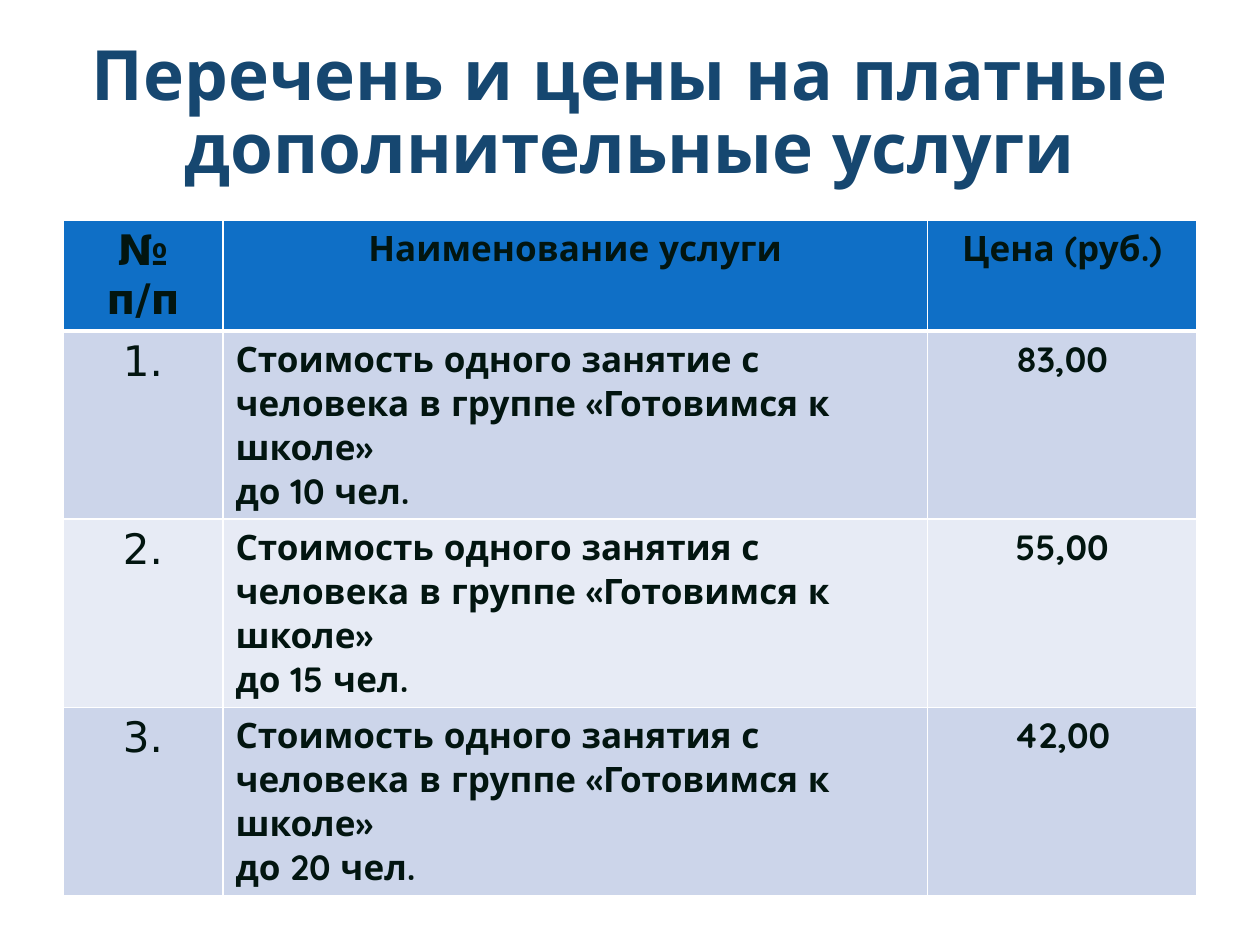
"""Build a slide with a price table for paid extra services."""
import pptx
import pptx.dml.color
import pptx.enum.text
import pptx.oxml
import pptx.oxml.ns
import pptx.util
from pptx.util import Inches

TITLE = "Перечень и цены на платные дополнительные услуги"
HEADER = ("№\nп/п", "Наименование услуги", "Цена (руб.)")
SERVICE = "Стоимость одного {} с человека в группе «Готовимся к школе»\nдо {} чел."
SERVICES = [("занятие", 10, "83,00"), ("занятия", 15, "55,00"), ("занятия", 20, "42,00")]
ROWS = [HEADER] + [
    (f"{number}.", SERVICE.format(noun, size), price)
    for number, (noun, size, price) in enumerate(SERVICES, 1)
]
WIDTHS = (1.27, 5.59, 2.14)
HEIGHTS = (0.77, 1.46, 1.46, 1.46)
COLORS = {"title": "164770", "text": "021510", "header": "0F6FC6",
          "odd": "CCD5EA", "even": "E7EBF5", "border": "FFFFFF"}
NUMBER_FONT = {"name": "DejaVu Sans", "size": pptx.util.Pt(24)}
TEXT_FONT = {"name": "Quicksand", "size": pptx.util.Pt(20), "bold": True}
TITLE_FONT = {"name": "Quicksand", "size": pptx.util.Pt(39.6), "bold": True}
ALIGN = pptx.enum.text.PP_ALIGN


def rgb(name):
    return pptx.dml.color.RGBColor.from_string(COLORS[name])


def format_text(tf, font, color, align):
    for p in tf.paragraphs:
        p.alignment = align
        for key, value in font.items():
            setattr(p.font, key, value)
        p.font.color.rgb = rgb(color)


def set_borders(cell, widths):
    for i, (side, width) in enumerate(widths.items()):
        line = pptx.oxml.parse_xml(
            f'<a:ln{side} {pptx.oxml.ns.nsdecls("a")} w="{pptx.util.Pt(width)}">'
            f'<a:solidFill><a:srgbClr val="{COLORS["border"]}"/></a:solidFill></a:ln{side}>')
        cell._tc.get_or_add_tcPr().insert(i, line)


def add_title(s):
    sp = s.shapes.title
    sp.left, sp.top, sp.width, sp.height = map(Inches, (0.51, 0.29, 8.98, 1.25))
    tf = sp.text_frame
    tf.text = TITLE
    tf.word_wrap = True
    tf.vertical_anchor = pptx.enum.text.MSO_ANCHOR.MIDDLE
    tf.paragraphs[0].line_spacing = 0.88
    format_text(tf, TITLE_FONT, "title", ALIGN.CENTER)


def add_prices(s):
    table = s.shapes.add_table(len(ROWS), len(WIDTHS), Inches(0.5), Inches(1.75),
                               Inches(sum(WIDTHS)), Inches(sum(HEIGHTS))).table
    for column, width in zip(table.columns, WIDTHS):
        column.width = Inches(width)
    for r, (row, height) in enumerate(zip(ROWS, HEIGHTS)):
        table.rows[r].height = Inches(height)
        fill = "header" if r == 0 else "odd" if r % 2 else "even"
        for c, text in enumerate(row):
            cell = table.cell(r, c)
            cell.text = text
            cell.fill.solid()
            cell.fill.fore_color.rgb = rgb(fill)
            set_borders(cell, {"L": 1, "R": 1, "T": 3 if r == 1 else 1, "B": 3 if r == 0 else 1})
            font = TEXT_FONT if c else {**NUMBER_FONT, "bold": r == 0}
            align = ALIGN.LEFT if r and c == 1 else ALIGN.CENTER
            format_text(cell.text_frame, font, "text", align)


def main():
    prs = pptx.Presentation()
    prs.slide_width, prs.slide_height = Inches(10), Inches(7.5)
    s = prs.slides.add_slide(prs.slide_layouts[5])
    add_title(s)
    add_prices(s)
    prs.save("out.pptx")


if __name__ == "__main__":
    main()
